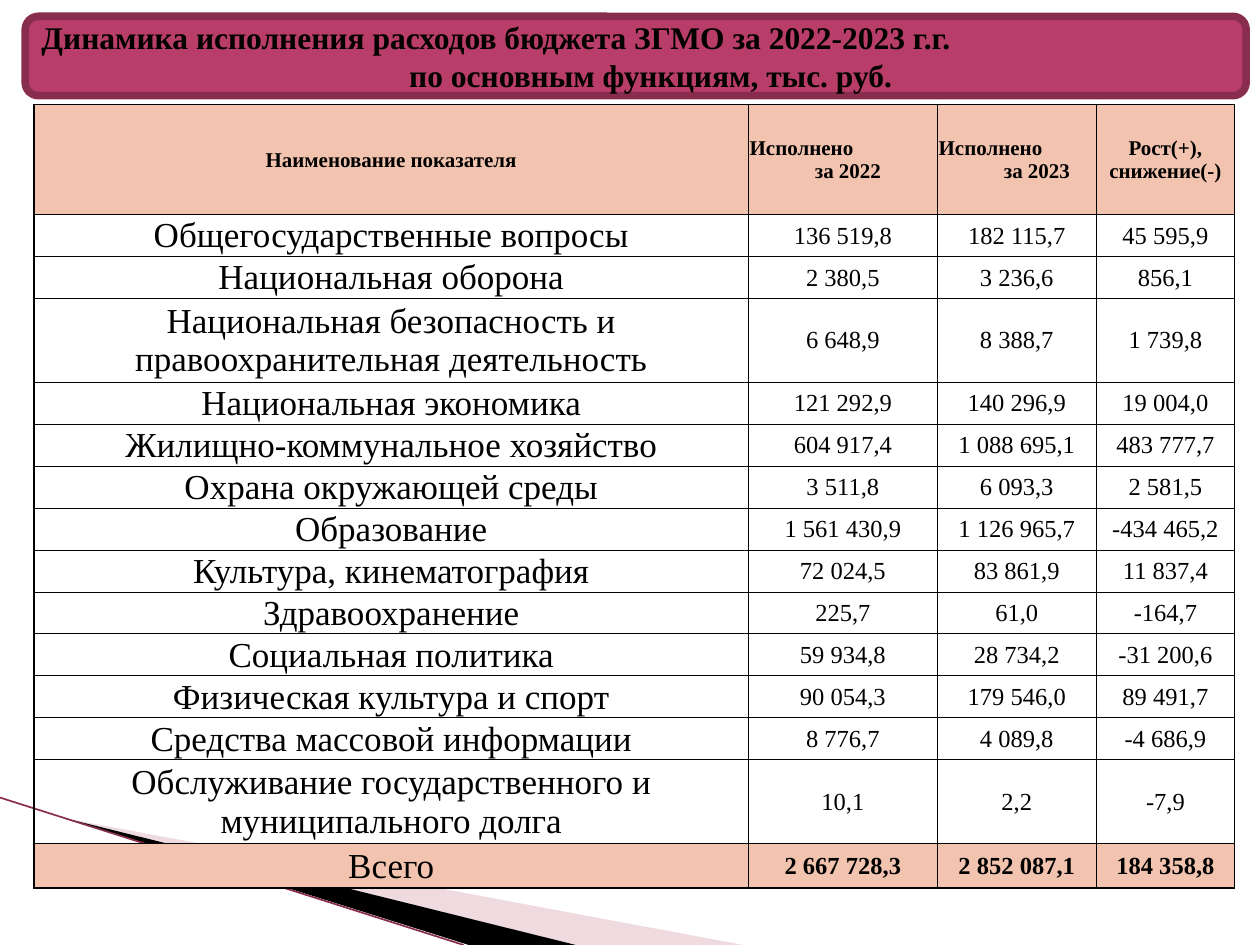
from lxml import etree
from pptx import Presentation
from pptx.dml.color import RGBColor
from pptx.enum.shapes import MSO_CONNECTOR, MSO_SHAPE
from pptx.enum.text import MSO_ANCHOR, PP_ALIGN
from pptx.oxml.ns import qn
from pptx.util import Inches, Pt

FONT = "Times New Roman"
BLACK, PEACH, RASPBERRY, MAROON, PINK = "000000", "F2C4AF", "B83D68", "882D4D", "D8A3AF"
CENTER, LEFT = PP_ALIGN.CENTER, PP_ALIGN.LEFT

HEADERS = ["Наименование показателя", "Исполнено\nза 2022", "Исполнено\nза 2023", "Рост(+), снижение(-)"]
ROWS = [
    ["Общегосударственные вопросы", "136 519,8", "182 115,7", "45 595,9"],
    ["Национальная оборона", "2 380,5", "3 236,6", "856,1"],
    ["Национальная безопасность и правоохранительная деятельность", "6 648,9", "8 388,7", "1 739,8"],
    ["Национальная экономика", "121 292,9", "140 296,9", "19 004,0"],
    ["Жилищно-коммунальное хозяйство", "604 917,4", "1 088 695,1", "483 777,7"],
    ["Охрана окружающей среды", "3 511,8", "6 093,3", "2 581,5"],
    ["Образование", "1 561 430,9", "1 126 965,7", "-434 465,2"],
    ["Культура, кинематография", "72 024,5", "83 861,9", "11 837,4"],
    ["Здравоохранение", "225,7", "61,0", "-164,7"],
    ["Социальная политика", "59 934,8", "28 734,2", "-31 200,6"],
    ["Физическая культура и спорт", "90 054,3", "179 546,0", "89 491,7"],
    ["Средства массовой информации", "8 776,7", "4 089,8", "-4 686,9"],
    ["Обслуживание государственного и муниципального долга", "10,1", "2,2", "-7,9"],
    ["Всего", "2 667 728,3", "2 852 087,1", "184 358,8"],
]
COLUMN_WIDTHS = [5.67, 1.5, 1.26, 1.1]
HEADER_HEIGHT, LINE_HEIGHT, TOTAL_HEIGHT = 0.87, 1 / 3, 0.35
TWO_LINE_ROWS = (3, 13)
YEAR_INDENTS = {1: 0.08, 2: 0.32}  # second header line, by column


def color(hex_string):
    return RGBColor.from_string(hex_string)


def write_lines(frame, text, size, bold, indent=0):
    """Centre the text; of two lines, the first stands left and the second is indented."""
    lines = text.split("\n")
    for index, line in enumerate(lines):
        paragraph = frame.paragraphs[0] if index == 0 else frame.add_paragraph()
        paragraph.alignment = LEFT if index < len(lines) - 1 else CENTER
        if index:
            paragraph._p.get_or_add_pPr().set("marL", str(Inches(indent)))
        run = paragraph.add_run()
        run.text = line
        run.font.name, run.font.size, run.font.bold = FONT, Pt(size), bold
        run.font.color.rgb = color(BLACK)


def add_wedge(slide, points, fill, opacity=None):
    start, *corners = [(Inches(x), Inches(y)) for x, y in points]
    builder = slide.shapes.build_freeform(*start)
    builder.add_line_segments(corners, close=True)
    wedge = builder.convert_to_shape()
    wedge.shadow.inherit = False
    wedge.line.fill.background()
    wedge.fill.solid()
    wedge.fill.fore_color.rgb = color(fill)
    if opacity is not None:
        fill_color = wedge.element.spPr.find(qn("a:solidFill"))[0]
        etree.SubElement(fill_color, qn("a:alpha")).set("val", str(opacity * 1000))


def add_corner_rays(slide, left, top, right, bottom):
    # Pale and black wedges fanning out to the bottom edge
    start = (left + 0.54, top + 0.17)
    add_wedge(slide, [start, (right, bottom), (4.56, bottom)], PINK, 40)
    add_wedge(slide, [start, (4.57, bottom), (3.72, bottom)], BLACK)
    # Thin outer edge
    edge = slide.shapes.add_connector(MSO_CONNECTOR.STRAIGHT, Inches(left), Inches(top),
                                      Inches(3.68), Inches(bottom))
    edge.line.color.rgb = color(MAROON)
    edge.line.width = Pt(0.95)
    etree.SubElement(edge.element.spPr, qn("a:effectLst"))


def add_title_banner(slide, left, top, width, height):
    banner = slide.shapes.add_shape(MSO_SHAPE.ROUNDED_RECTANGLE, Inches(left), Inches(top),
                                    Inches(width), Inches(height))
    banner.shadow.inherit = False
    banner.fill.solid()
    banner.fill.fore_color.rgb = color(RASPBERRY)
    banner.line.color.rgb = color(MAROON)
    banner.line.width = Pt(4.33)
    frame = banner.text_frame
    frame.word_wrap = True
    frame.vertical_anchor = MSO_ANCHOR.MIDDLE
    write_lines(frame, "Динамика исполнения расходов бюджета ЗГМО за 2022-2023 г.г.\n"
                "по основным функциям, тыс. руб.", 18, True, 0.24)


def set_borders(cell, outer_sides):
    properties = cell._tc.get_or_add_tcPr()
    for side in "LRTB":
        width = Pt(1 if side in outer_sides else 0.5)
        line = etree.SubElement(properties, qn(f"a:ln{side}"), w=str(width))
        fill = etree.SubElement(line, qn("a:solidFill"))
        etree.SubElement(fill, qn("a:srgbClr"), val=BLACK)


def format_cell(cell, text, size, bold, shaded, outer_sides, indent):
    cell.margin_left = cell.margin_right = cell.margin_top = Inches(0.01)
    cell.margin_bottom = 0
    cell.vertical_anchor = MSO_ANCHOR.MIDDLE
    set_borders(cell, outer_sides)
    if shaded:
        cell.fill.solid()
        cell.fill.fore_color.rgb = color(PEACH)
    else:
        cell.fill.background()
    write_lines(cell.text_frame, text, size, bold, indent)


def add_budget_table(slide, left, top, width, height):
    data = [HEADERS] + ROWS
    last_row, last_column = len(data) - 1, len(HEADERS) - 1
    table = slide.shapes.add_table(len(data), len(HEADERS), Inches(left), Inches(top),
                                   Inches(width), Inches(height)).table
    table.first_row = table.horz_banding = False
    for column, column_width in zip(table.columns, COLUMN_WIDTHS):
        column.width = Inches(column_width)
    for row, values in enumerate(data):
        is_header, is_total = row == 0, row == last_row
        row_height = LINE_HEIGHT * (2 if row in TWO_LINE_ROWS else 1)
        if is_header or is_total:
            row_height = HEADER_HEIGHT if is_header else TOTAL_HEIGHT
        table.rows[row].height = Inches(row_height)
        for column, text in enumerate(values):
            size = 12 if is_header else 20 if column == 0 else 14
            bold = is_header or (is_total and column > 0)
            edges = {"L": column == 0, "R": column == last_column, "T": is_header, "B": is_total}
            outer_sides = [side for side, is_outer in edges.items() if is_outer]
            format_cell(table.cell(row, column), text, size, bold, is_header or is_total,
                        outer_sides, YEAR_INDENTS.get(column, 0))


def main():
    presentation = Presentation()
    presentation.slide_width, presentation.slide_height = Inches(10), Inches(7.5)
    slide = presentation.slides.add_slide(presentation.slide_layouts[6])
    add_corner_rays(slide, 0, 6.33, 5.9, 7.5)
    add_title_banner(slide, 0.2, 0.13, 9.69, 0.63)
    add_budget_table(slide, 0.27, 0.83, sum(COLUMN_WIDTHS), 6.22)
    presentation.save("out.pptx")


if __name__ == "__main__":
    main()
